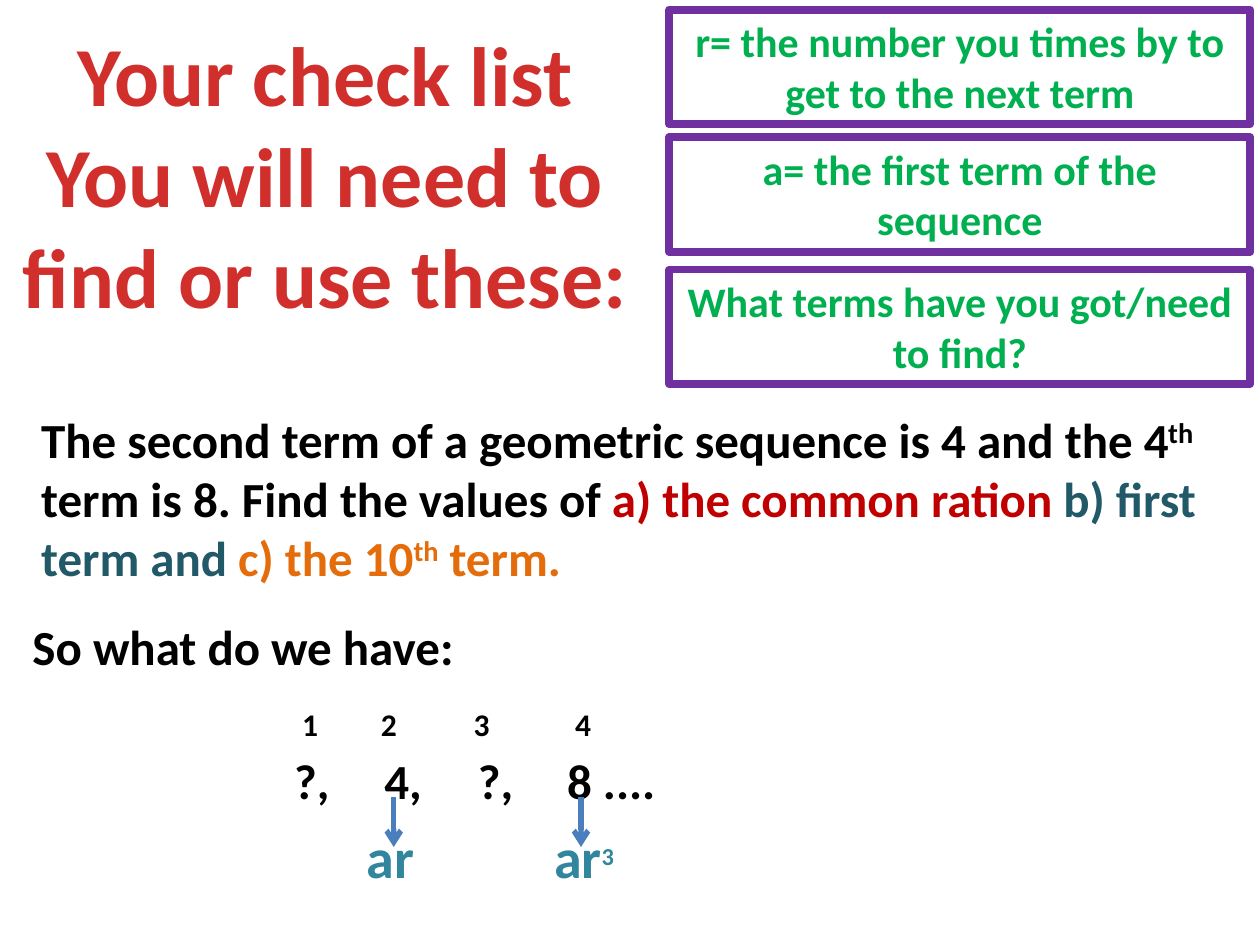
from pptx import Presentation
from pptx.dml.color import RGBColor
from pptx.enum.shapes import MSO_CONNECTOR as Connector, MSO_SHAPE as Shape
from pptx.enum.text import MSO_ANCHOR as Anchor, MSO_AUTO_SIZE as AutoSize, PP_ALIGN as Align
from pptx.oxml.xmlchemy import OxmlElement
from pptx.util import Pt


def rgb(value):
    return RGBColor.from_string(value)


def add_run(paragraph, text, size, color="000000", raised=False):
    run = paragraph.add_run()
    run.text = text
    run.font.name = "Calibri"
    run.font.size = Pt(size)
    run.font.bold = True
    run.font.color.rgb = rgb(color)
    if raised:
        run.font._element.set("baseline", "30000")


prs = Presentation()
prs.slide_width, prs.slide_height = Pt(720), Pt(540)
slide = prs.slides.add_slide(prs.slide_layouts[5])

heading = slide.shapes.title
heading.left, heading.top, heading.width, heading.height = Pt(0), Pt(9.5), Pt(371.5), Pt(181.5)
heading.text_frame.auto_size = AutoSize.NONE
heading.text_frame.vertical_anchor = Anchor.TOP
heading_lines = ["Your check list", "You will need to find or use these:"]
for index, line in enumerate(heading_lines):
    paragraph = heading.text_frame.paragraphs[0] if index == 0 else heading.text_frame.add_paragraph()
    paragraph.alignment = Align.CENTER
    add_run(paragraph, line, 48, "D02F2C")

checklist = [
    (5.5, "r= the number you times by to get to the next term"),
    (78.5, "a= the first term of the sequence"),
    (154, "What terms have you got/need to find?"),
]
for top, item in checklist:
    check = slide.shapes.add_shape(Shape.RECTANGLE, Pt(382.5), Pt(top), Pt(332), Pt(65.5))
    check.shadow.inherit = False
    check.fill.background()
    check.line.color.rgb = rgb("7030A0")
    check.line.width = Pt(4.5)
    check.text_frame.word_wrap = True
    check.text_frame.vertical_anchor = Anchor.TOP
    paragraph = check.text_frame.paragraphs[0]
    paragraph.alignment = Align.CENTER
    add_run(paragraph, item, 24, "00B050")

terms_tabs = [144.5, 196, 249.5, 300.5]
numbers_tabs = [149, 194, 247, 305]
passages = [
    ((16.5, 230.5, 720, 108.5), [([], [
        ("The second term of a geometric sequence is 4 and the 4", 28),
        ("th", 28, "000000", True),
        (" term is 8. Find the values of ", 28),
        ("a) the common ration ", 28, "C00000"),
        ("b) first term and ", 28, "215968"),
        ("c) the 10", 28, "E46C0A"),
        ("th", 28, "E46C0A", True),
        (" term.", 28, "E46C0A"),
    ])]),
    ((11.5, 348.5, 720, 41), [([], [("So what do we have:", 28)])]),
    ((16.5, 399.5, 646.5, 67.5), [
        (numbers_tabs, [("\t1\t2\t3\t4", 18)]),
        (terms_tabs, [("\t", 32), ("?,\t4,\t?,\t8 ....", 28)]),
    ]),
    ((202.5, 466.5, 45.5, 46), [([], [("ar", 32, "31859C")])]),
    ((309.5, 466.5, 67.5, 46), [([], [("ar", 32, "31859C"), ("3", 24, "31859C", True)])]),
]
for position, paragraphs in passages:
    passage = slide.shapes.add_textbox(*[Pt(length) for length in position])
    passage.text_frame.word_wrap = True
    for index, (tabs, runs) in enumerate(paragraphs):
        paragraph = passage.text_frame.paragraphs[0] if index == 0 else passage.text_frame.add_paragraph()
        if tabs:
            tab_list = OxmlElement("a:tabLst")
            for stop in tabs:
                tab = OxmlElement("a:tab")
                tab.set("pos", str(Pt(stop)))
                tab.set("algn", "l")
                tab_list.append(tab)
            paragraph._p.get_or_add_pPr().append(tab_list)
        for run in runs:
            add_run(paragraph, *run)

for x in [225, 332]:
    arrow = slide.shapes.add_connector(Connector.STRAIGHT, Pt(x), Pt(455.5), Pt(x), Pt(484))
    arrow.line.color.rgb = rgb("4B7EBC")
    arrow.line.width = Pt(3)
    arrowhead = OxmlElement("a:tailEnd")
    arrowhead.set("type", "arrow")
    arrow.line._get_or_add_ln().append(arrowhead)
    arrow._element.spPr.append(OxmlElement("a:effectLst"))

prs.save("out.pptx")
